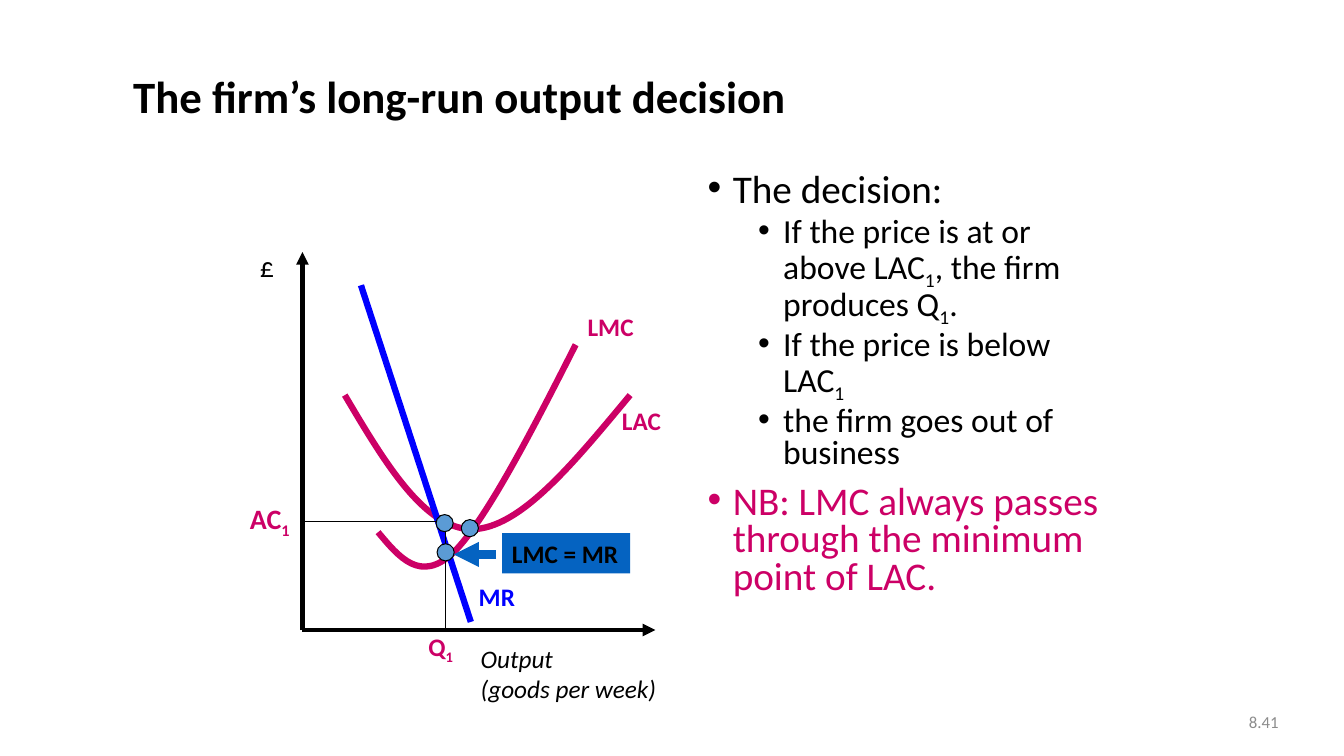
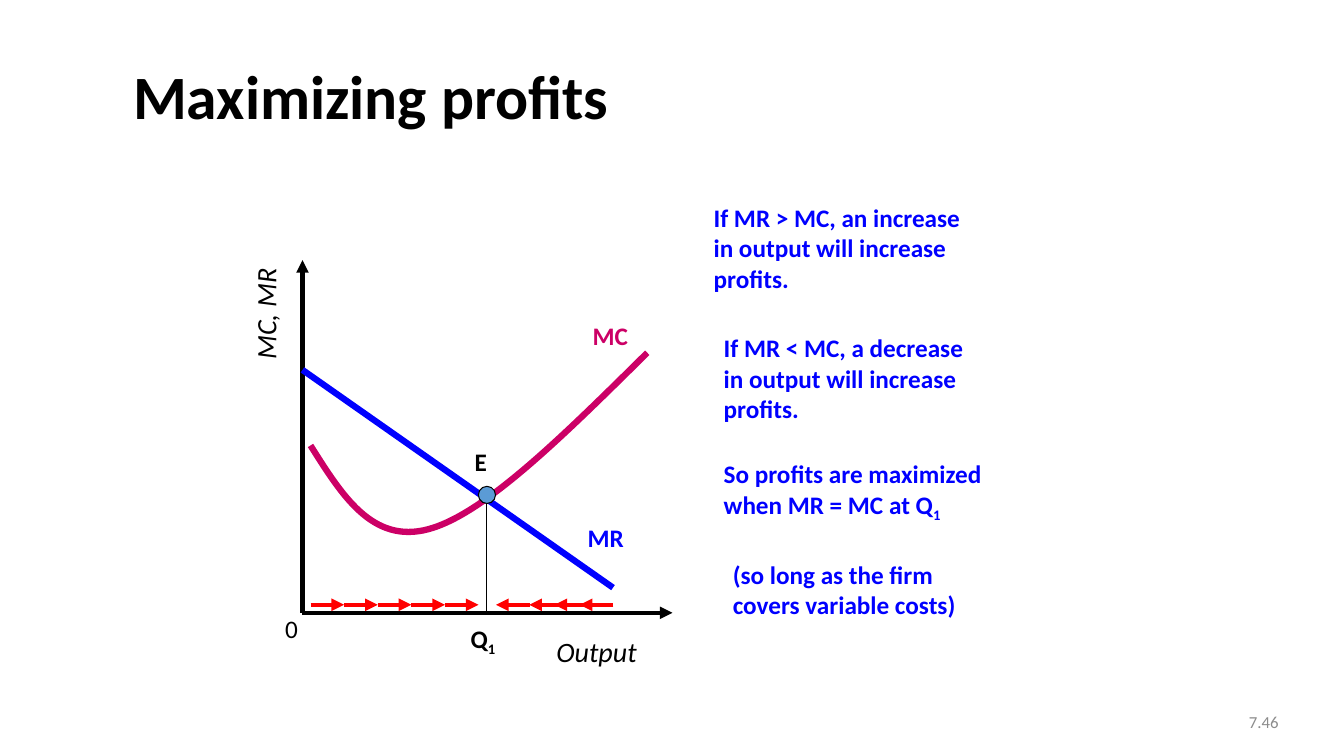
from lxml import etree
from pptx import Presentation
from pptx.dml.color import RGBColor
from pptx.enum.shapes import MSO_CONNECTOR, MSO_SHAPE
from pptx.enum.text import MSO_ANCHOR, MSO_AUTO_SIZE, PP_ALIGN
from pptx.oxml.ns import qn
from pptx.util import Inches, Pt

STRAIGHT = MSO_CONNECTOR.STRAIGHT
OVAL, RECT = MSO_SHAPE.OVAL, MSO_SHAPE.RECTANGLE
MIDDLE, TOP = MSO_ANCHOR.MIDDLE, MSO_ANCHOR.TOP
FIT, FIXED = MSO_AUTO_SIZE.SHAPE_TO_FIT_TEXT, MSO_AUTO_SIZE.NONE
LEFT, RIGHT = PP_ALIGN.LEFT, PP_ALIGN.RIGHT

FONT = "Calibri"
BLACK, GREY, PINK, BLUE = "000000", "8C8C8C", "CC0066", "0000FF"
RED, SKY, NAVY = "FF0000", "5B9BD5", "0563C1"
THIN, AXIS, CURVE, THICK = 0.75, 3, 4.5, 6
DOT = 0.17


def paint(target, color):
    """Set a colour on a font, fill or line."""
    if hasattr(target, "solid"):
        target.solid()
        target.fore_color.rgb = RGBColor.from_string(color)
    else:
        target.color.rgb = RGBColor.from_string(color)


def text(frame, words, size=18, color=BLACK, bold=False, ital=False,
         align=LEFT, space=None, before=0, bullet=None):
    """Add one paragraph per line; parts between underscores are subscripts."""
    for line in words.split("\n"):
        para = frame.paragraphs[0]
        if para.runs:
            para = frame.add_paragraph()
        para.alignment = align
        para.line_spacing = space
        para.space_before = Pt(before)
        if bullet is not None:
            props = para._p.get_or_add_pPr()
            props.set("marL", str(Inches(bullet)))
            props.set("indent", str(Inches(-0.25)))
            etree.SubElement(props, qn("a:buFont")).set("typeface", "Arial")
            etree.SubElement(props, qn("a:buChar")).set("char", "•")
        for i, part in enumerate(line.split("_")):
            if not part:
                continue
            run = para.add_run()
            run.text = part
            font = run.font
            font.name, font.size = FONT, Pt(size)
            font.bold, font.italic = bold, ital
            paint(font, color)
            if i % 2:
                run._r.get_or_add_rPr().set("baseline", "-25000")


def setup(frame, wrap=True, size=FIXED, anchor=TOP):
    """Set wrapping, sizing and anchor of a text frame."""
    frame.word_wrap = wrap
    frame.auto_size = size
    frame.vertical_anchor = anchor


def label(shapes, box, words, rot=0, **form):
    """Add an unwrapped text box."""
    item = shapes.add_textbox(*map(Inches, box))
    item.rotation = rot
    setup(item.text_frame, wrap=False, size=FIT)
    text(item.text_frame, words, **form)


class Plot:
    """A grouped graph, measured right and up from its axes' corner."""

    def __init__(self, slide, left, base, wide, high):
        """Draw the two axes."""
        self.shapes = slide.shapes.add_group_shape().shapes
        self.left, self.base = left, base
        self.line((0, 0), (wide, 0), width=AXIS, arrow=True)
        self.line((0, 0), (0, high), width=AXIS, arrow=True)

    def spot(self, x, y):
        """Turn graph units into slide lengths."""
        return Inches(self.left + x), Inches(self.base - y)

    def line(self, start, end, color=BLACK, width=THIN, arrow=False):
        """Draw a straight line or arrow."""
        item = self.shapes.add_connector(
            STRAIGHT, *self.spot(*start), *self.spot(*end))
        paint(item.line, color)
        item.line.width = Pt(width)
        props = item._element.spPr
        if arrow:
            tail = etree.SubElement(props.find(qn("a:ln")), qn("a:tailEnd"))
            tail.set("type", "triangle")
        etree.SubElement(props, qn("a:effectLst"))

    def curve(self, start, *points):
        """Draw a cubic curve, three points to a segment."""
        pen = self.shapes.build_freeform(*self.spot(*start))
        pen.add_line_segments([self.spot(*p) for p in points], close=False)
        item = pen.convert_to_shape()
        steps = item._element.xpath(".//a:lnTo")
        for i in range(0, len(steps), 3):
            bend = etree.Element(qn("a:cubicBezTo"))
            steps[i].addprevious(bend)
            for step in steps[i:i + 3]:
                bend.append(step[0])
                step.getparent().remove(step)
        item.shadow.inherit = False
        item.fill.background()
        paint(item.line, PINK)
        item.line.width = Pt(CURVE)

    def dot(self, x, y):
        """Draw a point centred on its place."""
        item = self.shapes.add_shape(
            OVAL, *self.spot(x - DOT / 2, y + DOT / 2), Inches(DOT), Inches(DOT))
        item.shadow.inherit = False
        paint(item.fill, SKY)
        paint(item.line, BLACK)
        item.line.width = Pt(THIN)

    def name(self, words, x, y, wide, high=0.4, **form):
        """Label a part of the graph."""
        box = self.left + x, self.base - y, wide, high
        label(self.shapes, box, words, **form)

    def tag(self, words, x, y, wide, high):
        """Add a filled label."""
        item = self.shapes.add_shape(
            RECT, *self.spot(x, y), Inches(wide), Inches(high))
        item.shadow.inherit = False
        paint(item.fill, NAVY)
        item.line.fill.background()
        setup(item.text_frame, wrap=False, size=FIT)
        text(item.text_frame, words, bold=True)


def page(deck, title, size, number):
    """Add a slide with its title and number."""
    slide = deck.slides.add_slide(deck.slide_layouts[5])
    head = slide.shapes.title
    head.left, head.top = Inches(1.22), Inches(0.38)
    head.width, head.height = Inches(11.33), Inches(1.21)
    setup(head.text_frame, anchor=MIDDLE)
    text(head.text_frame, title, size=size, bold=True, space=0.9)
    foot = slide.shapes.add_textbox(*map(Inches, (10, 6.91, 2.78, 0.5)))
    setup(foot.text_frame, anchor=MIDDLE)
    text(foot.text_frame, number, size=12, color=GREY, align=RIGHT)
    return slide


def points(slide, box):
    """Write the bulleted decision rule."""
    frame = slide.shapes.add_textbox(*map(Inches, box)).text_frame
    setup(frame)
    main = dict(size=28, space=0.8, before=10, bullet=0.25)
    text(frame, "The decision:", **main)
    text(frame, "If the price is at or above LAC_1_, the firm produces Q_1_.\n"
         "If the price is below LAC_1_\nthe firm goes out of business",
         size=24, space=0.8, before=5, bullet=0.75)
    text(frame, "NB: LMC always passes through the minimum point of LAC.",
         color=PINK, **main)


def costs(slide, left, base):
    """Draw the long-run cost graph."""
    plot = Plot(slide, left, base, 3.5, 3.75)
    plot.curve((0.42, 2.33), (0.81, 1.67), (1.21, 1), (1.68, 1),
               (2.16, 1), (2.7, 1.67), (3.25, 2.33))
    plot.curve((0.75, 0.97), (0.96, 0.72), (1.17, 0.46), (1.5, 0.77),
               (1.82, 1.09), (2.27, 1.96), (2.71, 2.83))
    plot.line((0.58, 3.42), (1.67, 0.08), BLUE, CURVE)
    plot.line((1.42, 1.08), (1.42, 0))
    plot.line((1.33, 1.08), (0, 1.08))
    for x, y in (1.41, 1.06), (1.66, 1.01), (1.42, 0.77):
        plot.dot(x, y)
    plot.name("£", -0.52, 3.82, 0.36, 0.43, size=20)
    plot.name("Output\n(goods per week)", 1.67, -0.08, 1.96, 0.71, ital=True)
    plot.name("MR", 1.65, 0.53, 0.56, color=BLUE, bold=True)
    pink = dict(color=PINK, bold=True)
    plot.name("AC_1_", -0.62, 1.32, 0.61, 0.44, size=20, **pink)
    plot.name("LAC", 3.07, 2.28, 0.59, **pink)
    plot.name("LMC", 2.73, 3.21, 0.66, **pink)
    plot.name("Q_1_", 1.15, 0.04, 0.46, **pink)
    plot.tag("LMC = MR", 1.98, 0.96, 1.27, 0.4)
    plot.line((1.92, 0.75), (1.5, 0.75), NAVY, THICK, True)


def profit(slide, left, base):
    """Draw the marginal cost and revenue graph."""
    plot = Plot(slide, left, base, 3.67, 3.5)
    step = 1 / 3
    for i in range(5):
        x = 0.08 + i * step
        plot.line((x, 0.08), (x + step, 0.08), RED, AXIS, True)
    for x in 1.92, 2.25, 2.5, 2.75:
        plot.line((x + step, 0.08), (x, 0.08), RED, AXIS, True)
    plot.curve((0.08, 1.66), (0.39, 1.17), (0.69, 0.68), (1.25, 0.83),
               (1.81, 0.98), (2.61, 1.78), (3.42, 2.58))
    plot.line((0, 2.41), (3.08, 0.25), BLUE, CURVE)
    plot.line((1.83, 1.16), (1.83, 0))
    plot.dot(1.83, 1.17)
    plot.name("Output", 2.42, -0.17, 1.03, 0.43, size=20, ital=True)
    plot.name("MC, MR", -0.92, 3.19, 1.11, 0.44, rot=270, size=20, ital=True)
    plot.name("Q_1_", 1.57, -0.05, 0.46, bold=True)
    plot.name("E", 1.61, 1.7, 0.32, bold=True)
    plot.name("MC", 2.78, 2.95, 0.56, color=PINK, bold=True)
    plot.name("MR", 2.73, 0.95, 0.56, color=BLUE, bold=True)
    plot.name("0", -0.27, 0.04, 0.33)


def notes(slide, left, top):
    """Write the steps of the argument beside the graph."""
    steps = (
        (0, 0, 2.67, 1.01,
         "If MR > MC, an increase\nin output will increase\nprofits."),
        (0.1, 1.29, 2.6, 1.01,
         "If MR < MC, a decrease\nin output will increase\nprofits."),
        (0.1, 2.54, 2.84, 0.71,
         "So profits are maximized\nwhen MR = MC at Q_1_"),
        (0.19, 3.54, 2.43, 0.71,
         "(so long as the firm\ncovers variable costs)"),
    )
    for x, y, wide, high, words in steps:
        label(slide.shapes, (left + x, top + y, wide, high), words,
              color=BLUE, bold=True)


def main():
    """Build and save the deck."""
    deck = Presentation()
    deck.slide_width, deck.slide_height = Inches(13.33), Inches(7.5)
    slide = page(deck, "The firm’s long-run output decision", 32, "8.41")
    points(slide, (6.92, 1.67, 4.17, 4.5))
    costs(slide, 3, 6.25)
    slide = page(deck, "Maximizing profits", 44, "7.46")
    profit(slide, 3, 6.08)
    notes(slide, 6.98, 1.96)
    deck.save("out.pptx")


if __name__ == "__main__":
    main()
